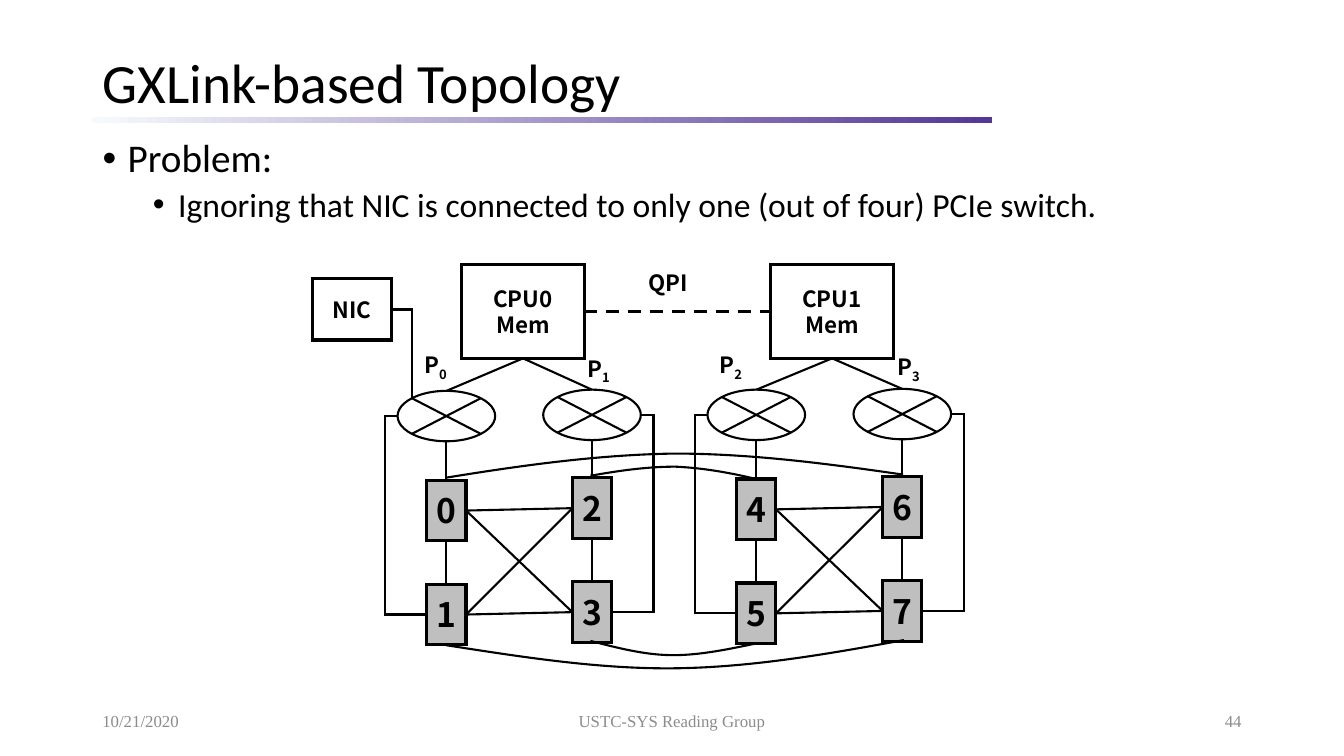
from itertools import product

from lxml import etree
from pptx import Presentation
from pptx.dml.color import RGBColor
from pptx.enum import dml, shapes, text
from pptx.oxml.ns import qn
from pptx.util import Cm, Pt

BLACK = RGBColor(0x00, 0x00, 0x00)
WHITE = RGBColor(0xFF, 0xFF, 0xFF)
GPU_GREY = RGBColor(0xBF, 0xBF, 0xBF)
FOOTER_GREY = RGBColor(0x8C, 0x8C, 0x8C)
RULE_START = RGBColor(0xF7, 0xFA, 0xFD)
RULE_END = RGBColor(0x54, 0x37, 0x95)

TITLE_FONT = {"name": "Calibri", "size": Pt(39.6), "bold": False}
BULLET_FONTS = [{"name": "Calibri", "size": Pt(28)}, {"name": "Calibri", "size": Pt(24)}]
FOOTER_FONT = {"name": "Times New Roman", "size": Pt(12)}
LABEL_FONT = {"name": "Noto Sans CJK SC", "size": Pt(16), "bold": True}
GPU_FONT = {**LABEL_FONT, "size": Pt(24)}

ALIGN = text.PP_ALIGN
RECTANGLE = shapes.MSO_SHAPE.RECTANGLE
JUNCTION = shapes.MSO_SHAPE.FLOWCHART_SUMMING_JUNCTION

SWITCH_WIDTH, SWITCH_HEIGHT = 2.46, 1.27
GPU_WIDTH, GPU_HEIGHT, GPU_STEP = 0.99, 1.53, 2.62
CPU_WIDTH, CPU_HEIGHT, CPU_TOP = 3.1, 2.36, 6.67
CPU_LEFTS = [11.63, 19.42]
BRACKET_REACH = 0.32

# Centre, switch top, first GPU top, label left and label top of each column
COLUMNS = [
    (11.25, 9.85, 12.1, 10.44, 8.73),
    (14.92, 9.82, 12.04, 14.55, 8.82),
    (19.06, 9.82, 12.07, 17.88, 8.73),
    (22.74, 9.8, 12.01, 22.36, 8.78),
]
CURVES = [
    [(11.23, 12.04), (13.13, 11.73), (15.06, 11.46), (16.99, 11.43),
     (18.9, 11.43), (20.83, 11.68), (22.76, 11.96)],
    [(11.25, 16.26), (13.18, 16.56), (15.14, 16.87), (17.07, 16.84),
     (18.97, 16.81), (20.88, 16.48), (22.78, 16.13)],
    [(14.88, 11.99), (15.6, 11.86), (16.31, 11.76), (17.02, 11.76),
     (17.7, 11.79), (18.39, 11.91), (19.05, 12.07)],
    [(14.88, 16.15), (15.57, 16.33), (16.26, 16.51), (16.97, 16.51),
     (17.65, 16.51), (18.36, 16.36), (19.08, 16.21)],
]


def set_attributes(target, values):
    """Set each named attribute on the target."""
    for name, value in values.items():
        setattr(target, name, value)


def set_font(font, values, colour=BLACK):
    """Apply a font format and colour."""
    set_attributes(font, values)
    font.color.rgb = colour


def place(shape, *box):
    """Move and size a shape in centimetres."""
    set_attributes(shape, dict(zip(("left", "top", "width", "height"), map(Cm, box))))


def set_line(shape, weight, dash=None):
    """Give a shape a black line with sharp corners."""
    shape.line.color.rgb = BLACK
    shape.line.width = Pt(weight)
    if dash:
        shape.line.dash_style = dash
    outline = shape._element.spPr.find(qn("a:ln"))
    etree.SubElement(outline, qn("a:miter")).set("lim", "800000")


def add_title(slide, words):
    """Fill and format the title placeholder."""
    title = slide.shapes.title
    place(title, 2.33, 1.42, 29.21, 1.48)
    frame = title.text_frame
    frame.text = words
    set_attributes(frame, {"vertical_anchor": text.MSO_ANCHOR.MIDDLE,
                           "auto_size": text.MSO_AUTO_SIZE.NONE})
    paragraph = frame.paragraphs[0]
    set_attributes(paragraph, {"alignment": ALIGN.LEFT, "line_spacing": 0.9})
    set_font(paragraph.runs[0].font, TITLE_FONT)


def add_bullets(slide, lines):
    """Fill the body placeholder, one list level per line."""
    body = slide.placeholders[1]
    place(body, 2.33, 3.37, 29.21, 13.79)
    frame = body.text_frame
    frame.text = "\n".join(lines)
    frame.auto_size = text.MSO_AUTO_SIZE.NONE
    for level, paragraph in enumerate(frame.paragraphs):
        set_attributes(paragraph, {"level": level, "line_spacing": 0.9,
                                   "space_before": Pt(5 * level)})
        properties = paragraph._p.get_or_add_pPr()
        properties.set("marL", str(Cm(0.635 + 1.27 * level)))
        properties.set("indent", str(-Cm(0.635)))
        etree.SubElement(properties, qn("a:buFont")).set("typeface", "Arial")
        etree.SubElement(properties, qn("a:buChar")).set("char", "•")
        set_font(paragraph.runs[0].font, BULLET_FONTS[level])


def add_rule(slide):
    """Draw the gradient bar under the title."""
    rule = slide.shapes.add_shape(RECTANGLE, Cm(2.33), Cm(2.95), Cm(22.66), Cm(0.14))
    rule.shadow.inherit = False
    rule.line.fill.background()
    rule.fill.gradient()
    rule.fill.gradient_angle = 0
    for stop, colour in zip(rule.fill.gradient_stops, (RULE_START, RULE_END)):
        stop.color.rgb = colour


def add_footer(slide, words, left, width, alignment):
    """Add one grey footer text."""
    box = slide.shapes.add_textbox(Cm(left), Cm(17.65), Cm(width), Cm(1.02))
    frame = box.text_frame
    set_attributes(frame, {"word_wrap": True, "vertical_anchor": text.MSO_ANCHOR.MIDDLE})
    frame.text = words
    frame.paragraphs[0].alignment = alignment
    set_font(frame.paragraphs[0].runs[0].font, FOOTER_FONT, FOOTER_GREY)


def add_node(slide, kind, box, words="", weight=2.25, fill=WHITE, font=LABEL_FONT):
    """Add an outlined shape with centred text."""
    node = slide.shapes.add_shape(kind, *map(Cm, box))
    node.shadow.inherit = False
    node.fill.solid()
    node.fill.fore_color.rgb = fill
    set_line(node, weight)
    if words:
        frame = node.text_frame
        frame.text = words
        set_attributes(frame, dict.fromkeys(
            ("margin_left", "margin_right", "margin_top", "margin_bottom"), 0))
        frame.vertical_anchor = text.MSO_ANCHOR.MIDDLE
        for paragraph in frame.paragraphs:
            paragraph.alignment = ALIGN.CENTER
            set_font(paragraph.runs[0].font, font)


def add_label(slide, left, top, width, words, subscript=""):
    """Add a bold label with an optional subscript."""
    box = slide.shapes.add_textbox(Cm(left), Cm(top), Cm(width), Cm(0.94))
    box.text_frame.word_wrap = False
    paragraph = box.text_frame.paragraphs[0]
    for part in filter(None, (words, subscript)):
        run = paragraph.add_run()
        run.text = part
        set_font(run.font, LABEL_FONT)
    if subscript:
        run._r.get_or_add_rPr().set("baseline", "-25000")


def add_link(slide, start, end, weight=1.5, dash=None):
    """Add a straight line between two points."""
    link = slide.shapes.add_connector(
        shapes.MSO_CONNECTOR.STRAIGHT, *map(Cm, (*start, *end)))
    set_line(link, weight, dash)
    etree.SubElement(link._element.spPr, qn("a:effectLst"))


def add_path(slide, points):
    """Draw an open outline through the points."""
    corners = [(Cm(x), Cm(y)) for x, y in points]
    builder = slide.shapes.build_freeform(*corners[0])
    builder.add_line_segments(corners[1:], close=False)
    outline = builder.convert_to_shape()
    outline.shadow.inherit = False
    outline.fill.background()
    set_line(outline, 1.5)
    return outline


def add_curve(slide, controls):
    """Draw joined cubic curves, three control points to each."""
    segments = list(add_path(slide, controls)._element.iter(qn("a:lnTo")))
    for first in range(0, len(segments), 3):
        cubic = etree.Element(qn("a:cubicBezTo"))
        segments[first].addprevious(cubic)
        for segment in segments[first:first + 3]:
            cubic.append(segment[0])
            segment.getparent().remove(segment)


def add_column(slide, index):
    """Draw a switch, its two GPUs and their links."""
    centre, switch_top, gpu_top, label_left, label_top = COLUMNS[index]
    cpu_centre = CPU_LEFTS[index // 2] + CPU_WIDTH / 2
    side = 1 if index % 2 else -1
    switch_edge = centre + side * SWITCH_WIDTH / 2
    switch_middle = switch_top + SWITCH_HEIGHT / 2
    low_top = gpu_top + GPU_STEP
    low_middle = low_top + GPU_HEIGHT / 2
    outside = switch_edge + side * BRACKET_REACH

    add_node(slide, JUNCTION, (centre - SWITCH_WIDTH / 2, switch_top,
                               SWITCH_WIDTH, SWITCH_HEIGHT), weight=1.5)
    for row, top in enumerate((gpu_top, low_top)):
        add_node(slide, RECTANGLE, (centre - GPU_WIDTH / 2, top, GPU_WIDTH, GPU_HEIGHT),
                 str(2 * index + row), fill=GPU_GREY, font=GPU_FONT)
    add_link(slide, (cpu_centre, CPU_TOP + CPU_HEIGHT), (centre, switch_top))
    add_link(slide, (centre, switch_top + SWITCH_HEIGHT), (centre, gpu_top))
    add_link(slide, (centre, gpu_top + GPU_HEIGHT), (centre, low_top))
    add_path(slide, [(switch_edge, switch_middle), (outside, switch_middle),
                     (outside, low_middle), (centre + side * GPU_WIDTH / 2, low_middle)])
    add_label(slide, label_left, label_top, 1.12, "P", str(index))


def add_mesh(slide, left, right):
    """Link every GPU of one column to every GPU of the next."""
    for left_row, right_row in product(range(2), repeat=2):
        add_link(slide, *((column[0] + side * GPU_WIDTH / 2,
                           column[2] + row * GPU_STEP + GPU_HEIGHT / 2)
                          for column, side, row in ((left, 1, left_row), (right, -1, right_row))))


def main():
    """Build the topology slide."""
    presentation = Presentation()
    set_attributes(presentation, {"slide_width": Cm(33.87), "slide_height": Cm(19.05)})
    slide = presentation.slides.add_slide(presentation.slide_layouts[1])
    add_rule(slide)
    add_title(slide, "GXLink-based Topology")
    add_bullets(slide, ["Problem:", "Ignoring that NIC is connected to only one "
                                    "(out of four) PCIe switch."])
    add_footer(slide, "10/21/2020", 2.33, 7.62, ALIGN.LEFT)
    add_footer(slide, "USTC-SYS Reading Group", 11.22, 11.43, ALIGN.CENTER)
    add_footer(slide, "44", 23.92, 7.62, ALIGN.RIGHT)

    add_node(slide, RECTANGLE, (7.87, 7.02, 1.99, 1.55), "NIC")
    for number, left in enumerate(CPU_LEFTS):
        add_node(slide, RECTANGLE, (left, CPU_TOP, CPU_WIDTH, CPU_HEIGHT), f"CPU{number}\nMem")
    add_link(slide, (CPU_LEFTS[0] + CPU_WIDTH, 7.86), (CPU_LEFTS[1], 7.86), 2.25,
             dml.MSO_LINE.DASH)
    add_label(slide, 16.09, 6.65, 1.55, "QPI")
    for index in range(len(COLUMNS)):
        add_column(slide, index)
    for first in (0, 2):
        add_mesh(slide, *COLUMNS[first:first + 2])
    add_path(slide, [(9.86, 7.8), (10.38, 7.8), (10.38, 10.04)])
    for controls in CURVES:
        add_curve(slide, controls)
    presentation.save("out.pptx")


if __name__ == "__main__":
    main()
